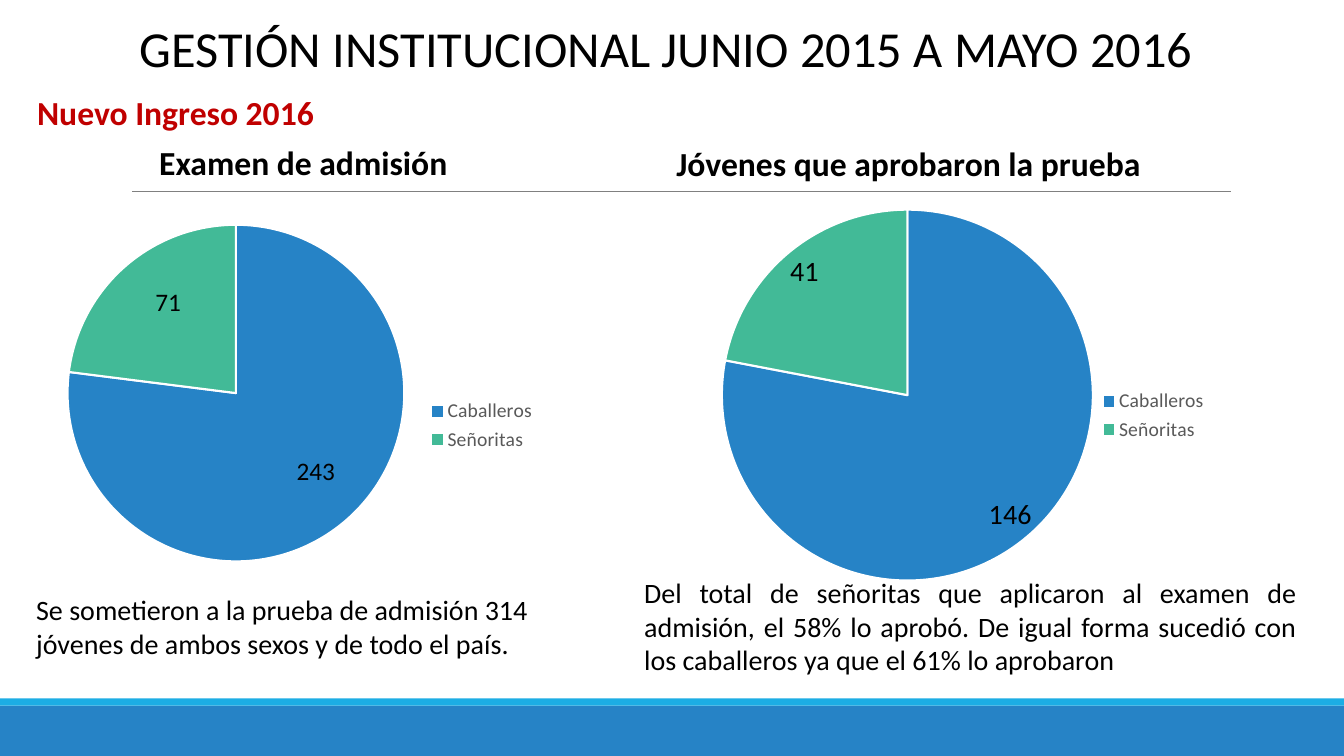
from lxml import etree
from pptx import Presentation
from pptx.chart.data import CategoryChartData
from pptx.dml.color import RGBColor
from pptx.enum.chart import XL_CHART_TYPE, XL_LABEL_POSITION, XL_LEGEND_POSITION
from pptx.enum.shapes import MSO_CONNECTOR, MSO_SHAPE
from pptx.enum.text import MSO_ANCHOR, PP_ALIGN
from pptx.oxml.ns import qn
from pptx.util import Inches, Pt

PIE = XL_CHART_TYPE.PIE
LABEL_CENTER = XL_LABEL_POSITION.CENTER
LEGEND_RIGHT = XL_LEGEND_POSITION.RIGHT
STRAIGHT = MSO_CONNECTOR.STRAIGHT
RECTANGLE = MSO_SHAPE.RECTANGLE
TOP = MSO_ANCHOR.TOP
LEFT, CENTER, JUSTIFY = PP_ALIGN.LEFT, PP_ALIGN.CENTER, PP_ALIGN.JUSTIFY

TITLE = ("GESTIÓN INSTITUCIONAL JUNIO 2015 A MAYO 2016", (1.23, 0.12, 10.76, 0.71))
TEXTS = [
    ("Nuevo Ingreso 2016", (0.27, 0.86, 2.97, 0.5), "section", LEFT),
    ("Examen de admisión", (1.48, 1.36, 3.09, 0.5), "heading", LEFT),
    ("Jóvenes que aprobaron la prueba", (6.61, 1.37, 4.85, 0.5), "heading", LEFT),
    ("Se sometieron a la prueba de admisión 314 jóvenes de ambos sexos y de todo el país.",
     (0.26, 5.83, 5.15, 0.77), "body", LEFT),
    ("Del total de señoritas que aplicaron al examen de admisión, el 58% lo aprobó. "
     "De igual forma sucedió con los caballeros ya que el 61% lo aprobaron",
     (6.29, 5.66, 6.67, 1.11), "body", JUSTIFY),
]
CATEGORIES = ["Caballeros", "Señoritas"]
CHARTS = [
    {"frame": (0.01, 1.94, 6.03, 3.93), "shares": (77, 23), "label_size": 18,
     "pie": (0.67, 2.23, 3.34), "legend": (4.18, 3.92),
     "labels": [("243", (0.04, 0.04)), ("71", (-0.02, -0.07))]},
    {"frame": (6.53, 1.94, 6.2, 3.97), "shares": (78, 22), "label_size": 20,
     "pie": (7.16, 2.08, 3.68), "legend": (10.84, 3.82),
     "labels": [("146", (0.07, 0.12)), ("41", (-0.07, -0.13))]},
]
LEGEND_SIZE = (1.2, 0.6)
BANDS = [((0, 7, 13.33, 0.5), "blue"), ((0, 6.93, 13.33, 0.07), "cyan")]
RULE = (1.31, 1.9, 12.21, 1.9)

THEME = {
    "font": "Calibri",
    "colors": {"black": "000000", "red": "C00000", "gray": "595959", "rule": "808080",
               "blue": "2683C6", "cyan": "1CADE4", "green": "42BA97", "white": "FFFFFF"},
    "styles": {"title": (36, "black", False), "section": (24, "red", True),
               "heading": (24, "black", True), "body": (20, "black", False),
               "legend": (14, "gray", False)},
    "slices": ("blue", "green"),
}


def color(name):
    return RGBColor.from_string(THEME["colors"][name])


def set_font(font, size, color_name, bold=False):
    font.name = THEME["font"]
    font.size = Pt(size)
    font.bold = bold
    font.color.rgb = color(color_name)


def write_text(box, text, style, alignment, wrap):
    frame = box.text_frame
    frame.word_wrap = wrap
    frame.vertical_anchor = TOP
    para = frame.paragraphs[0]
    para.alignment = alignment
    span = para.add_run()
    span.text = text
    set_font(span.font, *THEME["styles"][style])


def set_layout(parent, index, **values):
    for old in parent.findall(qn("c:layout")):
        parent.remove(old)
    layout = etree.Element(qn("c:layout"))
    manual = etree.SubElement(layout, qn("c:manualLayout"))
    for tag, value in values.items():
        etree.SubElement(manual, qn(f"c:{tag}")).set("val", str(value))
    parent.insert(index, layout)


def place_in_chart(parent, index, frame, area, **target):
    left, top, width, height = frame
    x, y, area_width, area_height = area
    set_layout(parent, index, **target, xMode="edge", yMode="edge",
               x=round((x - left) / width, 4), y=round((y - top) / height, 4),
               w=round(area_width / width, 4), h=round(area_height / height, 4))


def add_pie(page, item):
    data = CategoryChartData()
    data.categories = CATEGORIES
    data.add_series("Series 1", item["shares"])
    frame = item["frame"]
    chart = page.shapes.add_chart(PIE, *map(Inches, frame), data).chart
    chart.has_title = False
    set_font(chart.font, 10, "black")
    chart.has_legend = True
    chart.legend.position = LEGEND_RIGHT
    chart.legend.include_in_layout = False
    set_font(chart.legend.font, *THEME["styles"]["legend"])
    plot = chart.plots[0]
    plot.vary_by_categories = True

    for index, (text, offset) in enumerate(item["labels"]):
        point = plot.series[0].points[index]
        point.format.fill.solid()
        point.format.fill.fore_color.rgb = color(THEME["slices"][index])
        point.format.line.color.rgb = color("white")
        point.format.line.width = Pt(1.5)
        label = point.data_label
        span = label.text_frame.paragraphs[0].add_run()
        span.text = text
        set_font(span.font, item["label_size"], "black")
        label.position = LABEL_CENTER

    root = chart.element
    for node, (text, offset) in zip(root.iter(qn("c:dLbl")), item["labels"]):
        set_layout(node, 1, x=offset[0], y=offset[1])
    x, y, diameter = item["pie"]
    place_in_chart(next(root.iter(qn("c:plotArea"))), 0, frame,
                   (x, y, diameter, diameter), layoutTarget="inner")
    place_in_chart(next(root.iter(qn("c:legend"))), 1, frame, item["legend"] + LEGEND_SIZE)


def main():
    deck = Presentation()
    deck.slide_width, deck.slide_height = Inches(13.33), Inches(7.5)
    page = deck.slides.add_slide(deck.slide_layouts[5])

    for area, fill in BANDS:
        band = page.shapes.add_shape(RECTANGLE, *map(Inches, area))
        band.shadow.inherit = False
        band.fill.solid()
        band.fill.fore_color.rgb = color(fill)
        band.line.fill.background()

    rule = page.shapes.add_connector(STRAIGHT, *map(Inches, RULE))
    rule.line.color.rgb = color("rule")
    rule.line.width = Pt(0.5)
    etree.SubElement(rule.element.spPr, qn("a:effectLst"))

    text, area = TITLE
    title = page.shapes.title
    title.left, title.top, title.width, title.height = map(Inches, area)
    write_text(title, text, "title", CENTER, False)

    for item in CHARTS:
        add_pie(page, item)

    for text, area, style, alignment in TEXTS:
        box = page.shapes.add_textbox(*map(Inches, area))
        write_text(box, text, style, alignment, style == "body")

    deck.save("out.pptx")


if __name__ == "__main__":
    main()
